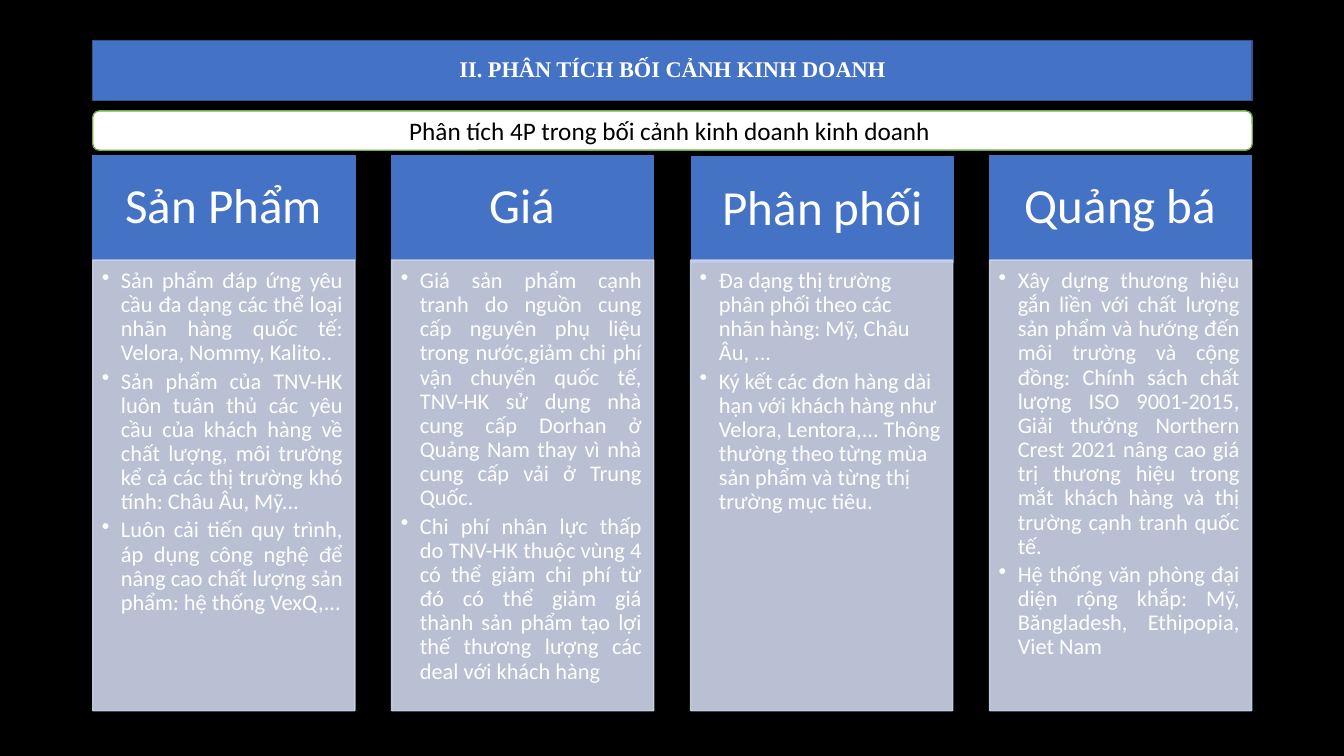
from pptx import Presentation
from pptx.dml.color import RGBColor
from pptx.enum.shapes import MSO_SHAPE as Preset
from pptx.enum.text import MSO_ANCHOR as Anchor, PP_ALIGN as Align
from pptx.oxml.ns import qn
from pptx.util import Inches, Pt
from lxml.etree import SubElement

COLUMNS = [
    ("Sản Phẩm", Align.JUSTIFY, [
        "Sản phẩm đáp ứng yêu cầu đa dạng các thể loại nhãn hàng quốc tế: "
        "Velora, Nommy, Kalito..",
        "Sản phẩm của TNV-HK luôn tuân thủ các yêu cầu của khách hàng về chất lượng, "
        "môi trường kể cả các thị trường khó tính: Châu Âu, Mỹ...",
        "Luôn cải tiến quy trình, áp dụng công nghệ để nâng cao chất lượng sản phẩm: "
        "hệ thống VexQ,...",
    ]),
    ("Giá", Align.JUSTIFY, [
        "Giá sản phẩm cạnh tranh do nguồn cung cấp nguyên phụ liệu trong nước,"
        "giảm chi phí vận chuyển quốc tế, TNV-HK sử dụng nhà cung cấp Dorhan ở "
        "Quảng Nam thay vì nhà cung cấp vải ở Trung Quốc.",
        "Chi phí nhân lực thấp do TNV-HK thuộc vùng 4 có thể giảm chi phí từ đó "
        "có thể giảm giá thành sản phẩm tạo lợi thế thương lượng các deal với khách hàng",
    ]),
    ("Phân phối", Align.LEFT, [
        "Đa dạng thị trường phân phối theo các nhãn hàng: Mỹ, Châu Âu, ...",
        "Ký kết các đơn hàng dài hạn với khách hàng như Velora, Lentora,... "
        "Thông thường theo từng mùa sản phẩm và từng thị trường mục tiêu.",
    ]),
    ("Quảng bá", Align.JUSTIFY, [
        "Xây dựng thương hiệu gắn liền với chất lượng sản phẩm và hướng đến môi trường "
        "và cộng đồng: Chính sách chất lượng ISO 9001-2015, Giải thưởng Northern Crest "
        "2021 nâng cao giá trị thương hiệu trong mắt khách hàng và thị trường cạnh tranh "
        "quốc tế.",
        "Hệ thống văn phòng đại diện rộng khắp: Mỹ, Băngladesh, Ethipopia, Viet Nam",
    ]),
]
LEFT, PITCH, COLUMN_WIDTH, BANNER_WIDTH = 0.92, 2.965, 2.6, 11.5
HEADING_TOP, HEADING_HEIGHT = 1.54, 1.04
BODY_TOP, BODY_HEIGHT = 2.58, 4.47


def rgb(value):
    return RGBColor.from_string(value)


def set_alpha(color_format, percent):
    """Make a solid fill partly transparent."""
    color = color_format._xPr.find(qn("a:solidFill"))[0]
    SubElement(color, qn("a:alpha")).set("val", str(percent * 1000))


def write(paragraph, text, size=16, color="FFFFFF", font="Calibri", bold=False,
          align=Align.CENTER, spacing=0.9, after=0, bullet_indent=0):
    paragraph.alignment = align
    paragraph.line_spacing = spacing
    paragraph.space_after = Pt(after)
    run = paragraph.add_run()
    run.text = text
    run.font.size = Pt(size)
    run.font.name = font
    run.font.bold = bold
    run.font.color.rgb = rgb(color)
    if bullet_indent:
        paragraph.level = 1
        properties = paragraph._p.get_or_add_pPr()
        properties.set("marL", str(Inches(bullet_indent)))
        properties.set("indent", str(-Inches(bullet_indent)))
        SubElement(properties, qn("a:buChar")).set("char", "•")


class FourPSlide:
    BLUE, BLUE_EDGE, PALE = "4472C4", "325491", "CFD5EA"
    WHITE, GREEN, BLACK = "FFFFFF", "70AD47", "000000"

    def __init__(self, deck):
        self.slide = deck.slides.add_slide(deck.slide_layouts[6])
        background = self.slide.background.fill
        background.solid()
        background.fore_color.rgb = rgb(self.BLACK)

    def box(self, left, top, width, height, fill, line, preset=Preset.RECTANGLE,
            anchor=Anchor.MIDDLE, insets=(0.1, 0.05, 0.1, 0.05), opacity=100):
        shape = self.slide.shapes.add_shape(
            preset, Inches(left), Inches(top), Inches(width), Inches(height))
        shape.shadow.inherit = False
        shape.fill.solid()
        shape.fill.fore_color.rgb = rgb(fill)
        shape.line.color.rgb = rgb(line)
        shape.line.width = Pt(1)
        if opacity < 100:
            set_alpha(shape.fill, opacity)
            set_alpha(shape.line.fill, opacity)
        frame = shape.text_frame
        frame.word_wrap = True
        frame.vertical_anchor = anchor
        (frame.margin_left, frame.margin_top,
         frame.margin_right, frame.margin_bottom) = map(Inches, insets)
        return frame

    def title(self, text):
        frame = self.box(LEFT, 0.4, BANNER_WIDTH, 0.6, self.BLUE, self.BLUE_EDGE)
        write(frame.paragraphs[0], text, font="Times New Roman", bold=True)

    def subtitle(self, text):
        frame = self.box(LEFT, 1.1, BANNER_WIDTH, 0.39, self.WHITE, self.GREEN,
                         preset=Preset.ROUNDED_RECTANGLE)
        write(frame.paragraphs[0], text, size=18, color=self.BLACK, spacing=1)

    def heading(self, left, top, text):
        frame = self.box(left, top, COLUMN_WIDTH, HEADING_HEIGHT, self.BLUE, self.BLUE,
                         insets=(0.27, 0.16, 0.27, 0.16))
        write(frame.paragraphs[0], text, size=35)

    def body(self, left, points, align):
        frame = self.box(left, BODY_TOP, COLUMN_WIDTH, BODY_HEIGHT, self.PALE, self.PALE,
                         anchor=Anchor.TOP, insets=(0.09, 0.09, 0.12, 0.14), opacity=90)
        for index, point in enumerate(points):
            paragraph = frame.add_paragraph() if index else frame.paragraphs[0]
            write(paragraph, point, align=align, after=2.8, bullet_indent=0.19)


def main():
    deck = Presentation()
    deck.slide_width, deck.slide_height = Inches(13.33), Inches(7.5)
    slide = FourPSlide(deck)
    for index, (name, align, points) in enumerate(COLUMNS):
        left = LEFT + index * PITCH
        # The distribution heading sits slightly lower and to the right.
        shift_x, shift_y = (0.01, 0.02) if name == "Phân phối" else (0, 0)
        slide.heading(left + shift_x, HEADING_TOP + shift_y, name)
        slide.body(left, points, align)
    slide.title("II. PHÂN TÍCH BỐI CẢNH KINH DOANH")
    slide.subtitle("Phân tích 4P trong bối cảnh kinh doanh kinh doanh ")
    deck.save("out.pptx")


if __name__ == "__main__":
    main()
